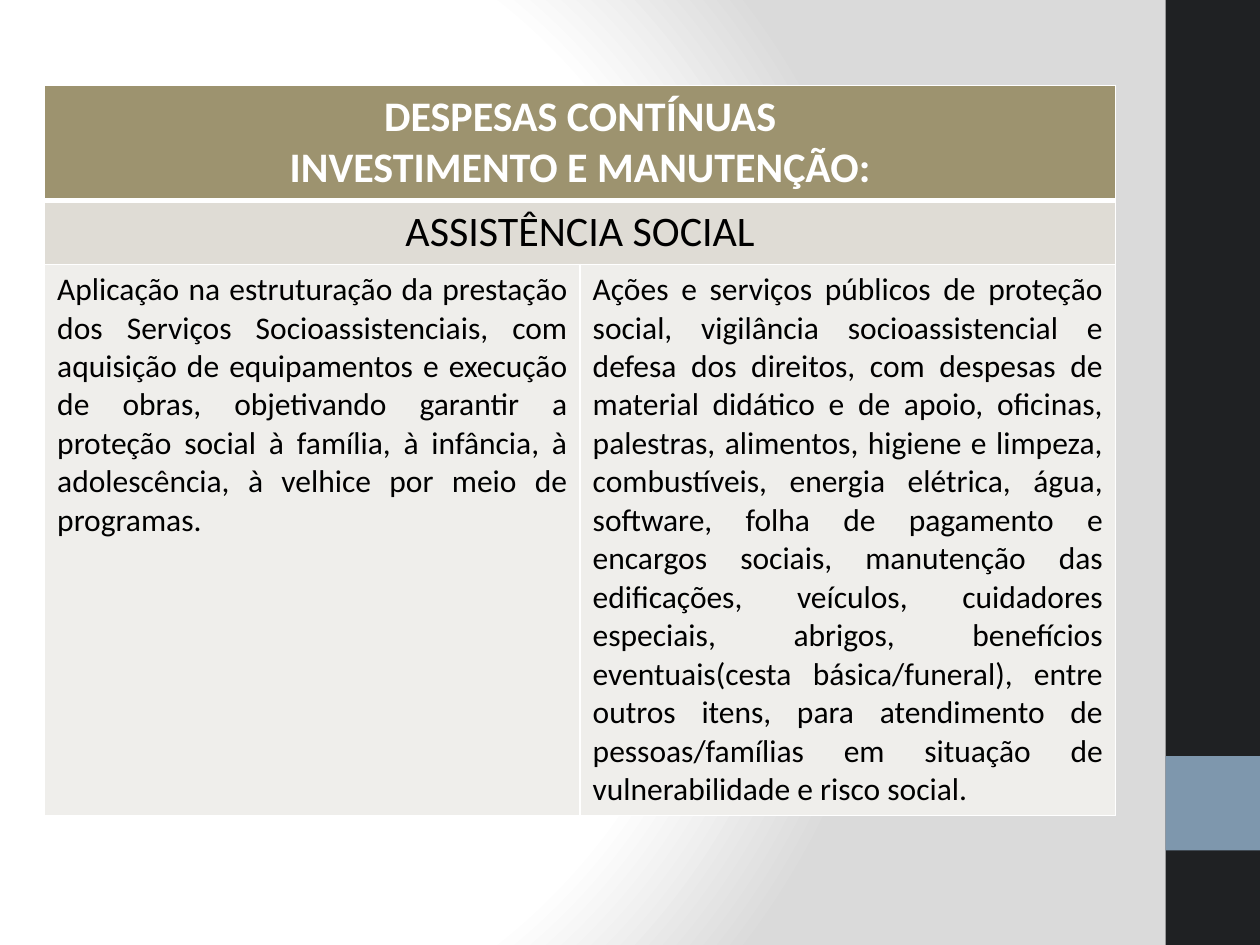
from dataclasses import dataclass

from lxml import etree
from pptx import Presentation
from pptx.dml.color import RGBColor
from pptx.enum.shapes import MSO_SHAPE
from pptx.enum.text import PP_ALIGN
from pptx.oxml import parse_xml
from pptx.oxml.ns import nsdecls, qn
from pptx.util import Pt

RECTANGLE = MSO_SHAPE.RECTANGLE
CENTER = PP_ALIGN.CENTER
JUSTIFY = PP_ALIGN.JUSTIFY


@dataclass(frozen=True)
class Theme:
    """Colours and type sizes of the slide."""
    font: str = "Calibri"
    heading_size: int = 24
    body_size: int = 18
    white: str = "FFFFFF"
    black: str = "000000"
    glow: str = "DADADA"
    band: str = "1F2123"
    accent: str = "7E97AD"
    header: str = "9D936F"
    subheader: str = "DFDCD5"
    body: str = "EFEEEB"


THEME = Theme()

HEADER = ["DESPESAS CONTÍNUAS", "INVESTIMENTO E MANUTENÇÃO:"]
AREA = ["ASSISTÊNCIA SOCIAL"]
INVESTMENT = [
    "Aplicação na estruturação da prestação dos Serviços Socioassistenciais, com "
    "aquisição de equipamentos e execução de obras, objetivando garantir a proteção "
    "social à família, à infância, à adolescência, à velhice por meio de programas."
]
UPKEEP = [
    "Ações e serviços públicos de proteção social, vigilância socioassistencial e "
    "defesa dos direitos, com despesas de material didático e de apoio, oficinas, "
    "palestras, alimentos, higiene e limpeza, combustíveis, energia elétrica, água, "
    "software, folha de pagamento e encargos sociais, manutenção das edificações, "
    "veículos, cuidadores especiais, abrigos, benefícios eventuais(cesta "
    "básica/funeral), entre outros itens, para atendimento de pessoas/famílias em "
    "situação de vulnerabilidade e risco social."
]


def paint_background(slide):
    """Fill the slide with a circular gradient from white to grey."""
    slide.background.fill.solid()
    solid = slide.element.find(".//" + qn("p:bgPr")).find(qn("a:solidFill"))
    stops = "".join(
        f'<a:gs pos="{percent * 1000}"><a:srgbClr val="{color}"/></a:gs>'
        for percent, color in ((0, THEME.white), (75, THEME.white), (100, THEME.glow))
    )
    gradient = parse_xml(
        f'<a:gradFill {nsdecls("a")} rotWithShape="1"><a:gsLst>{stops}</a:gsLst>'
        '<a:path path="circle"><a:fillToRect l="20000" t="50000" r="100000" b="50000"/>'
        "</a:path></a:gradFill>"
    )
    solid.getparent().replace(solid, gradient)


def add_side_band(slide, left, top, width, height):
    """Draw the dark band with its square accent."""
    accent_top = top + height * 0.8
    for y, block_height, color in ((top, height, THEME.band), (accent_top, width, THEME.accent)):
        block = slide.shapes.add_shape(RECTANGLE, Pt(left), Pt(y), Pt(width), Pt(block_height))
        block.shadow.inherit = False
        block.fill.solid()
        block.fill.fore_color.rgb = RGBColor.from_string(color)
        block.line.fill.background()


def set_borders(cell, top=1, bottom=1):
    """Give a cell white borders, one point wide at the sides."""
    properties = cell._tc.get_or_add_tcPr()
    for side, width in (("L", 1), ("R", 1), ("T", top), ("B", bottom)):
        border = etree.SubElement(properties, qn(f"a:ln{side}"), w=str(Pt(width)))
        fill = etree.SubElement(border, qn("a:solidFill"))
        etree.SubElement(fill, qn("a:srgbClr"), val=THEME.white)


def write_cell(cell, lines, size, align, color=THEME.black, bold=False):
    """Write one paragraph per line in a single style."""
    frame = cell.text_frame
    frame.text = "\n".join(lines)
    for paragraph in frame.paragraphs:
        paragraph.alignment = align
        paragraph.font.name = THEME.font
        paragraph.font.size = Pt(size)
        paragraph.font.bold = bold
        paragraph.font.color.rgb = RGBColor.from_string(color)


def add_expenses(slide, left, top, width, row_heights):
    """Place the expense table with two merged heading rows."""
    frame = slide.shapes.add_table(3, 2, Pt(left), Pt(top), Pt(width), Pt(sum(row_heights)))
    expenses = frame.table
    for row, height in zip(expenses.rows, row_heights):
        row.height = Pt(height)

    row_styles = ((THEME.header, 1, 3), (THEME.subheader, 3, 1), (THEME.body, 1, 1))
    for row, (color, top_border, bottom_border) in zip(expenses.rows, row_styles):
        for cell in row.cells:
            set_borders(cell, top_border, bottom_border)
            cell.fill.solid()
            cell.fill.fore_color.rgb = RGBColor.from_string(color)

    for index in range(2):
        expenses.cell(index, 0).merge(expenses.cell(index, 1))
    write_cell(expenses.cell(0, 0), HEADER, THEME.heading_size, CENTER, THEME.white, True)
    write_cell(expenses.cell(1, 0), AREA, THEME.heading_size, CENTER)
    for column, lines in enumerate((INVESTMENT, UPKEEP)):
        write_cell(expenses.cell(2, column), lines, THEME.body_size, JUSTIFY)


def main():
    """Build the slide and save it."""
    deck = Presentation()
    deck.slide_width, deck.slide_height = Pt(720), Pt(540)
    slide = deck.slides.add_slide(deck.slide_layouts[6])
    paint_background(slide)
    add_side_band(slide, 666, 0, 54, 540)
    add_expenses(slide, 25.5, 48.75, 612, (65.8, 36.5, 315))
    deck.save("out.pptx")


if __name__ == "__main__":
    main()
